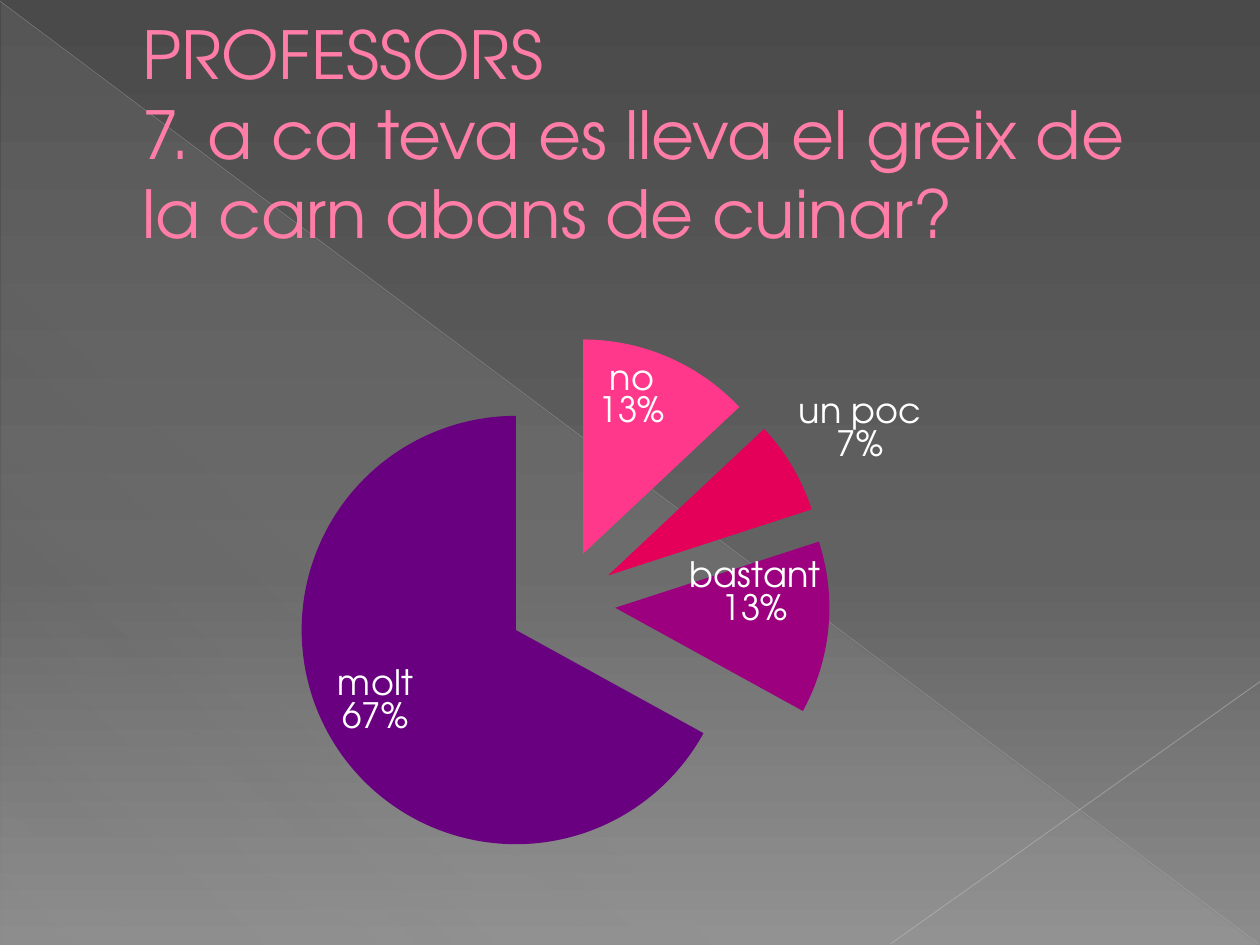
from dataclasses import dataclass

from lxml.etree import SubElement
from pptx import Presentation
from pptx.chart.data import CategoryChartData
from pptx.dml.color import RGBColor
from pptx.enum.chart import XL_CHART_TYPE, XL_LABEL_POSITION
from pptx.enum.shapes import MSO_CONNECTOR, MSO_SHAPE
from pptx.enum.text import MSO_ANCHOR
from pptx.oxml import parse_xml
from pptx.oxml.ns import nsdecls, qn
from pptx.util import Inches, Pt


@dataclass(frozen=True)
class Theme:
    font: str = "TeX Gyre Adventor"
    title: str = "FF7DA7"
    title_edge: str = "B12761"
    label: str = "FFFFFF"
    title_size: float = 37.8
    label_size: float = 20
    chart_size: float = 10
    background: tuple = ((0, "4A4A4A", 100), (60, "626262", 100), (100, "8C8C8C", 100))
    sheen: tuple = ((0, "D2D2D2", 10), (70, "D2D2D2", 8), (100, "D2D2D2", 1))
    slices: tuple = ("FF388C", "E40059", "9C007F", "68007F")


THEME = Theme()
ANSWERS = {"no": 13, "un poc": 7, "bastant": 13, "molt": 67}
EXPLOSION = 25


def set_gradient(fill, root, stops, angle):
    fill.gradient()
    grad = root.xpath(".//a:gradFill")[0]
    gs = "".join(
        f'<a:gs pos="{pos * 1000}"><a:srgbClr val="{color}">'
        f'<a:alpha val="{alpha * 1000}"/></a:srgbClr></a:gs>'
        for pos, color, alpha in stops
    )
    grad.getparent().replace(grad, parse_xml(
        f'<a:gradFill {nsdecls("a")} rotWithShape="1"><a:gsLst>{gs}</a:gsLst>'
        f'<a:lin ang="{angle * 60000}" scaled="0"/></a:gradFill>'
    ))


def add_rule(slide, start, end, color, width, alpha):
    points = [Inches(v) for v in (*start, *end)]
    line = slide.shapes.add_connector(MSO_CONNECTOR.STRAIGHT, *points)
    line.line.width = Pt(width)
    line.line.color.rgb = RGBColor.from_string(color)
    sp_pr = line._element.spPr
    clr = sp_pr.xpath(".//a:srgbClr")[0]
    SubElement(clr, qn("a:alpha")).set("val", str(alpha * 1000))
    SubElement(sp_pr, qn("a:effectLst"))


def add_backdrop(slide, x, y, w, h):
    set_gradient(slide.background.fill, slide._element, THEME.background, 90)
    sp = slide.shapes.add_shape(
        MSO_SHAPE.RIGHT_TRIANGLE, *(Inches(v) for v in (x + 0.01, y + 0.02, w - 0.02, h - 0.02)))
    sp.shadow.inherit = False
    sp.line.fill.background()
    set_gradient(sp.fill, sp._element.spPr, THEME.sheen, 133)
    add_rule(slide, (x, y + 0.01), (x + w - 0.01, y + h - 0.01), "BFBFBF", 0.39, 35)
    add_rule(slide, (x + w, y + 5.41), (x + 7.07, y + h - 0.01), "C6C6C6", 0.47, 45)


def add_title(slide, text, x, y, w, h):
    tf = slide.shapes.add_textbox(*(Inches(v) for v in (x, y, w, h))).text_frame
    tf.word_wrap = True
    tf.vertical_anchor = MSO_ANCHOR.MIDDLE
    p = tf.paragraphs[0]
    p.text = text
    p.font.name = THEME.font
    p.font.size = Pt(THEME.title_size)
    p.font.color.rgb = RGBColor.from_string(THEME.title)
    p._p.get_or_add_pPr().set("marL", str(Inches(0.53)))
    for r in p.runs:
        r._r.get_or_add_rPr().insert(0, parse_xml(
            f'<a:ln {nsdecls("a")} w="{Pt(0.5)}"><a:solidFill>'
            f'<a:srgbClr val="{THEME.title_edge}"/></a:solidFill></a:ln>'
        ))


def style_font(font, size):
    font.name = THEME.font
    font.size = Pt(size)
    font.color.rgb = RGBColor.from_string(THEME.label)


def explosion():
    return parse_xml(f'<c:explosion {nsdecls("c")} val="{EXPLOSION}"/>')


def style_labels(plot, series):
    plot.has_data_labels = True
    series_labels = series.data_labels
    series_labels.show_value = False
    series_labels.show_percentage = True
    series_labels.show_category_name = True
    series_labels.position = XL_LABEL_POSITION.INSIDE_END
    series_labels.number_format = "0%"
    series_labels.number_format_is_linked = False
    style_font(series_labels.font, THEME.label_size)

    outside = series.points[1].data_label
    style_font(outside.font, THEME.label_size)
    outside.position = XL_LABEL_POSITION.OUTSIDE_END
    label = series._element.xpath("c:dLbls/c:dLbl")[0]
    for tag, shown in (("showVal", "0"), ("showCatName", "1"), ("showPercent", "1")):
        label.find(qn(f"c:{tag}")).set("val", shown)


def add_pie(slide, x, y, w, h):
    data = CategoryChartData()
    data.categories = list(ANSWERS)
    data.add_series("Series 1", list(ANSWERS.values()))
    chart = slide.shapes.add_chart(
        XL_CHART_TYPE.PIE, *(Inches(v) for v in (x, y, w, h)), data).chart
    chart.has_legend = False
    chart.has_title = False
    style_font(chart.font, THEME.chart_size)
    plot = chart.plots[0]
    plot.vary_by_categories = True
    series = plot.series[0]
    for i, color in enumerate(THEME.slices):
        fill = series.points[i].format.fill
        fill.solid()
        fill.fore_color.rgb = RGBColor.from_string(color)
    slices = series._element.findall(qn("c:dPt"))
    slices[0].addprevious(explosion())
    for point in slices:
        point.find(qn("c:spPr")).addprevious(explosion())
    style_labels(plot, series)

    area = chart._chartSpace.xpath("c:chart/c:plotArea")[0]
    for old in area.findall(qn("c:layout")):
        area.remove(old)
    frame = "".join(
        f'<c:{tag} val="{value}"/>'
        for tag, value in (("layoutTarget", "inner"), ("xMode", "edge"), ("yMode", "edge"),
                           ("x", 0.2), ("y", 0.12), ("w", 0.48), ("h", 0.85))
    )
    area.insert(0, parse_xml(
        f'<c:layout {nsdecls("c")}><c:manualLayout>{frame}</c:manualLayout></c:layout>'
    ))


def main():
    prs = Presentation()
    prs.slide_width, prs.slide_height = Inches(10), Inches(7.5)
    s = prs.slides.add_slide(prs.slide_layouts[6])
    add_backdrop(s, 0, 0, 10, 7.5)
    add_title(s, "PROFESSORS\v7. a ca teva es lleva el greix de la carn abans de cuinar?",
              0.5, 0.29, 9, 1.53)
    add_pie(s, 0.5, 2.06, 9, 5)
    prs.save("out.pptx")


if __name__ == "__main__":
    main()
